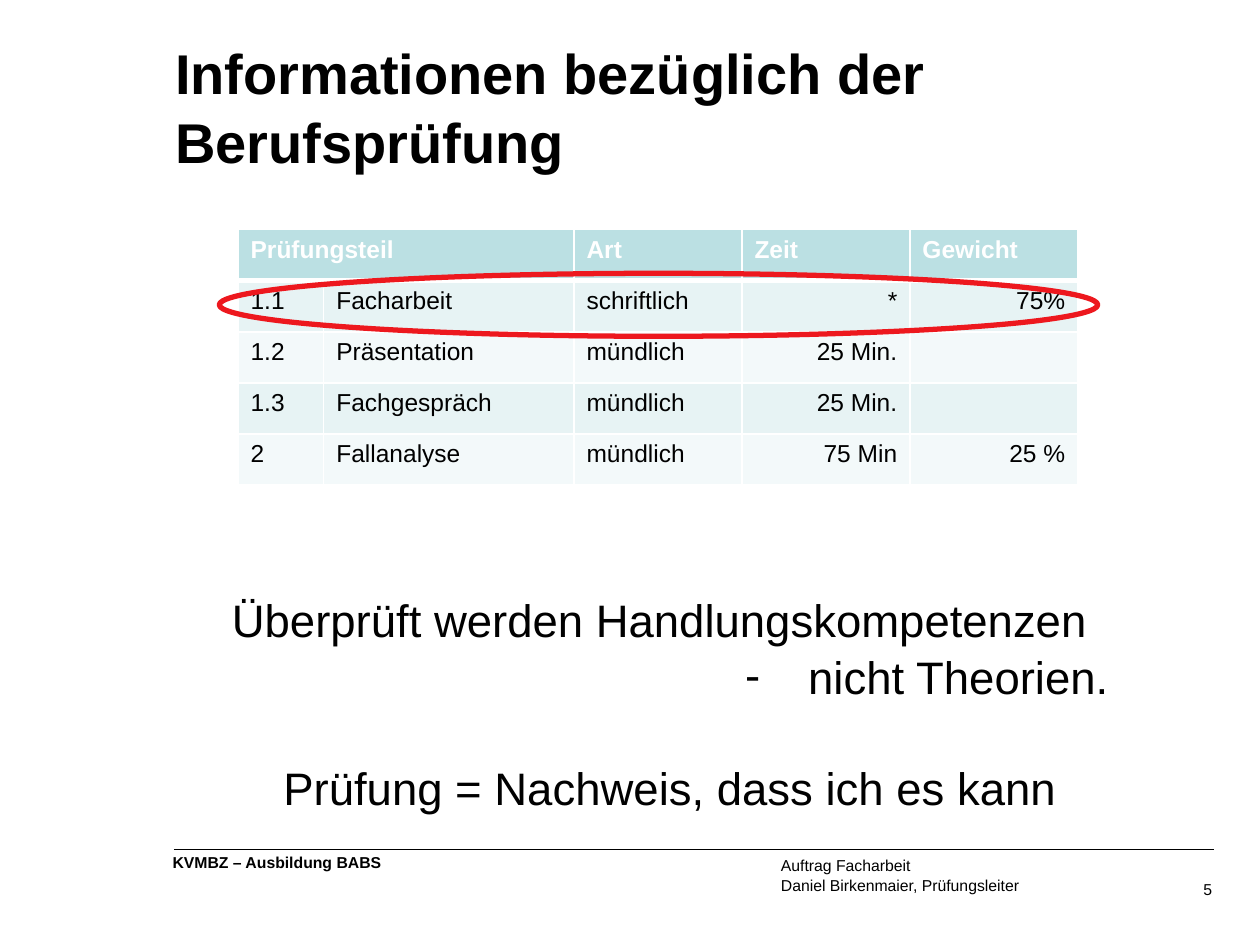
from pptx import Presentation
from pptx.dml.color import RGBColor
from pptx.enum.shapes import MSO_CONNECTOR as Connector, MSO_SHAPE as Shape
from pptx.enum.text import MSO_ANCHOR as Anchor, MSO_AUTO_SIZE as AutoSize, PP_ALIGN as Align
from pptx.oxml.ns import qn
from pptx.util import Pt
from lxml.etree import SubElement

COLORS = {
    "text": "000000", "white": "FFFFFF", "header": "BBE0E3",
    "odd_row": "E7F3F4", "even_row": "F3F9FA", "marker": "ED181E",
}
FONT = "Arial"
COLUMN_WIDTHS = [49, 143, 96, 96, 96]
ROW_HEIGHT = 29.2
ROWS = [
    ["Prüfungsteil", "", "Art", "Zeit", "Gewicht"],
    ["1.1", "Facharbeit", "schriftlich", "*", "75%"],
    ["1.2", "Präsentation", "mündlich", "25 Min.", ""],
    ["1.3", "Fachgespräch", "mündlich", "25 Min.", ""],
    ["2", "Fallanalyse", "mündlich", "75 Min", "25 %"],
]


def color(name):
    return RGBColor.from_string(COLORS[name])


def format_paragraph(paragraph, size, bold=False, name="text", align=Align.LEFT):
    paragraph.alignment = align
    for run in paragraph.runs:
        run.font.name = FONT
        run.font.size = Pt(size)
        run.font.bold = bold
        run.font.color.rgb = color(name)


def place(shape, left, top, width, height):
    shape.left, shape.top = Pt(left), Pt(top)
    shape.width, shape.height = Pt(width), Pt(height)


def clear_margins(text_frame):
    text_frame.margin_left = text_frame.margin_right = 0
    text_frame.margin_top = text_frame.margin_bottom = 0


def fill_title(title):
    place(title, 100, 22.3, 587.5, 77.8)
    text_frame = title.text_frame
    text_frame.text = "Informationen bezüglich der Berufsprüfung"
    text_frame.auto_size = AutoSize.NONE
    text_frame.vertical_anchor = Anchor.BOTTOM
    clear_margins(text_frame)
    paragraph = text_frame.paragraphs[0]
    paragraph.line_spacing = 1.04
    format_paragraph(paragraph, 32, bold=True)


def fill_body(body):
    place(body, 125.3, 333.4, 515.5, 133.2)
    text_frame = body.text_frame
    text_frame.text = ("Überprüft werden Handlungskompetenzen\n"
                       "nicht Theorien.\n"
                       "Prüfung = Nachweis, dass ich es kann")
    text_frame.auto_size = AutoSize.NONE
    text_frame.vertical_anchor = Anchor.TOP
    settings = [(Align.LEFT, None, 0), (Align.RIGHT, "-", 0), (Align.CENTER, None, 31)]
    for paragraph, (align, bullet, space) in zip(text_frame.paragraphs, settings):
        properties = paragraph._p.get_or_add_pPr()
        indent = Pt(36) if bullet else 0
        properties.set("marL", str(indent))
        properties.set("indent", str(-indent))
        if bullet:
            SubElement(properties, qn("a:buChar")).set("char", bullet)
        else:
            SubElement(properties, qn("a:buNone"))
        paragraph.space_before = Pt(space)
        paragraph.line_spacing = 1.04
        format_paragraph(paragraph, 26, align=align)


def set_borders(cell, bottom):
    properties = cell._tc.get_or_add_tcPr()
    for side, width in (("L", 1), ("R", 1), ("T", 1), ("B", bottom)):
        line = SubElement(properties, qn(f"a:ln{side}"), w=str(Pt(width)))
        fill = SubElement(line, qn("a:solidFill"))
        SubElement(fill, qn("a:srgbClr")).set("val", COLORS["white"])


def add_exam_table(slide):
    shape = slide.shapes.add_table(len(ROWS), len(COLUMN_WIDTHS), Pt(136), Pt(131.2),
                                   Pt(sum(COLUMN_WIDTHS)), Pt(ROW_HEIGHT * len(ROWS)))
    table = shape.table
    for column, width in zip(table.columns, COLUMN_WIDTHS):
        column.width = Pt(width)
    for row_index, values in enumerate(ROWS):
        table.rows[row_index].height = Pt(ROW_HEIGHT)
        header = row_index == 0
        fill = "header" if header else ("even_row", "odd_row")[row_index % 2]
        for column_index, value in enumerate(values):
            cell = table.cell(row_index, column_index)
            set_borders(cell, bottom=3 if header else 1)
            cell.fill.solid()
            cell.fill.fore_color.rgb = color(fill)
            cell.text = value
            numeric = column_index >= 3 and not header
            format_paragraph(cell.text_frame.paragraphs[0], 14, bold=header,
                             name="white" if header else "text",
                             align=Align.RIGHT if numeric else Align.LEFT)
    table.cell(0, 0).merge(table.cell(0, 1))


def add_marker(slide, left, top, width, height):
    ellipse = slide.shapes.add_shape(Shape.OVAL, Pt(left), Pt(top), Pt(width), Pt(height))
    ellipse.shadow.inherit = False
    ellipse.fill.background()
    ellipse.line.color.rgb = color("marker")
    ellipse.line.width = Pt(3)


def add_footer_text(slide, text, left, top, width, height, align=Align.LEFT, margins=True):
    box = slide.shapes.add_textbox(Pt(left), Pt(top), Pt(width), Pt(height))
    text_frame = box.text_frame
    text_frame.word_wrap = True
    if not margins:
        clear_margins(text_frame)
    text_frame.text = text
    format_paragraph(text_frame.paragraphs[0], 9, align=align)


def add_footer_label(slide, text, left, top, width, height):
    label = slide.shapes.add_shape(Shape.OCTAGON, Pt(left), Pt(top), Pt(width), Pt(height))
    label.adjustments[0] = 0.29
    label.shadow.inherit = False
    label.fill.background()
    label.line.fill.background()
    text_frame = label.text_frame
    text_frame.word_wrap = False
    text_frame.vertical_anchor = Anchor.TOP
    clear_margins(text_frame)
    text_frame.text = text
    format_paragraph(text_frame.paragraphs[0], 9, bold=True)


def add_rule(slide, left, right, top):
    line = slide.shapes.add_connector(Connector.STRAIGHT, Pt(left), Pt(top), Pt(right), Pt(top))
    line.line.color.rgb = color("text")
    line.line.width = Pt(0.75)
    SubElement(line._element.spPr, qn("a:effectLst"))


def main():
    presentation = Presentation()
    presentation.slide_width, presentation.slide_height = Pt(720), Pt(540)
    slide = presentation.slides.add_slide(presentation.slide_layouts[1])

    # Title and key message
    fill_title(slide.shapes.title)
    fill_body(slide.placeholders[1])

    # Exam parts, with the written paper marked
    add_exam_table(slide)
    add_marker(slide, 125.3, 156.2, 502, 36)

    # Footer
    add_rule(slide, 99.4, 694, 485.3)
    add_footer_label(slide, "KVMBZ – Ausbildung BABS", 96.5, 485.3, 124, 15)
    add_footer_text(slide, "Auftrag Facharbeit", 439.2, 485.3, 255, 17.3)
    add_footer_text(slide, "Daniel Birkenmaier, Prüfungsleiter", 439.2, 496.8, 255, 17.3)
    add_footer_text(slide, "5", 674.6, 502.6, 18, 10.8, align=Align.RIGHT, margins=False)

    presentation.save("out.pptx")


if __name__ == "__main__":
    main()
